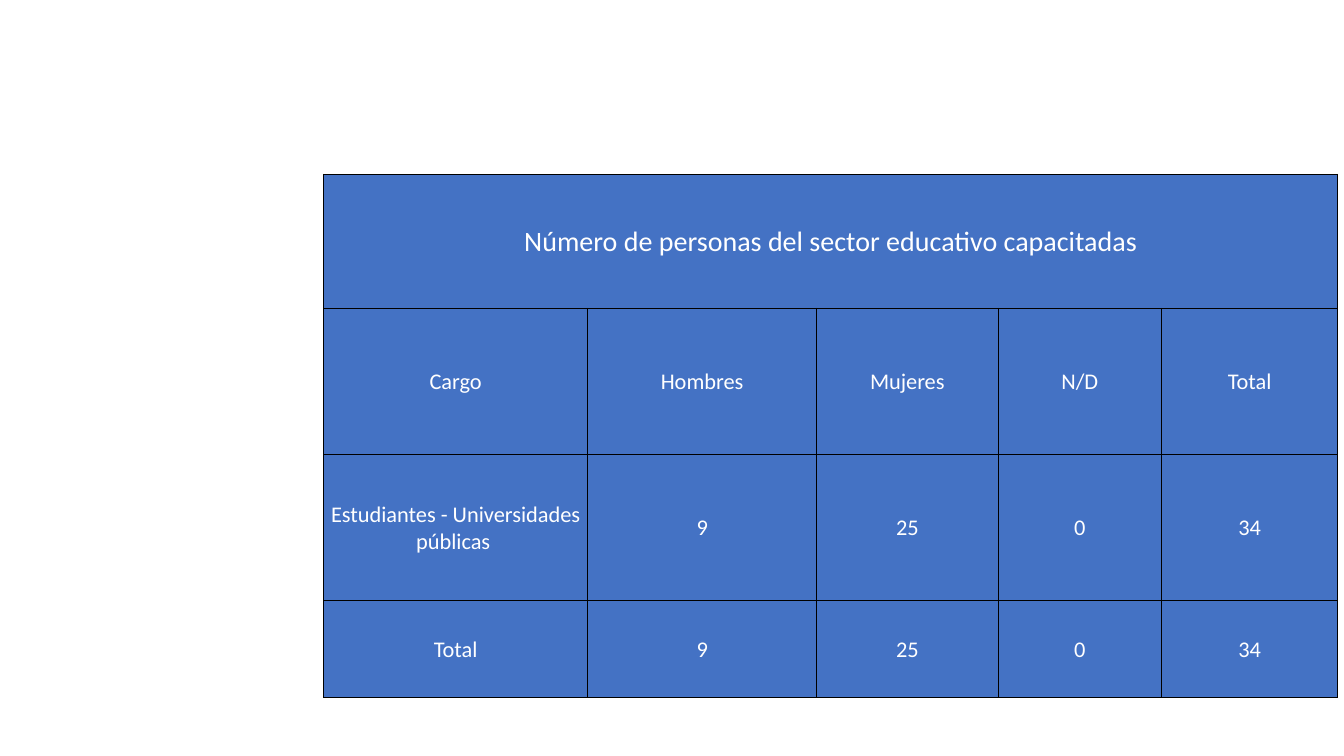
"""Build a slide with a table of trained people in the education sector."""
from lxml.etree import SubElement
from pptx import Presentation
from pptx.dml.color import RGBColor
from pptx.enum.text import MSO_ANCHOR, PP_ALIGN
from pptx.oxml.ns import qn
from pptx.util import Inches, Pt


def color(value):
    return RGBColor.from_string(value)


def add_borders(cell, value, width):
    properties = cell._tc.get_or_add_tcPr()
    for side in ("lnL", "lnR", "lnT", "lnB"):
        line = SubElement(properties, qn(f"a:{side}"), w=str(width))
        fill = SubElement(line, qn("a:solidFill"))
        SubElement(fill, qn("a:srgbClr"), val=value)


deck = Presentation()
deck.slide_width, deck.slide_height = Inches(13.33), Inches(7.5)
page = deck.slides.add_slide(deck.slide_layouts[6])

column_widths = [2.62, 2.27, 1.8, 1.62, 1.75]
row_heights = [1.33, 1.45, 1.45, 0.96]
rows = [
    ["Número de personas del sector educativo capacitadas", "", "", "", ""],
    ["Cargo", "Hombres", "Mujeres", "N/D", "Total"],
    ["Estudiantes - Universidades públicas ", "9", "25", "0", "34"],
    ["Total", "9", "25", "0", "34"],
]

table = page.shapes.add_table(
    len(rows), len(column_widths), Inches(3.21), Inches(1.73),
    Inches(sum(column_widths)), Inches(sum(row_heights))).table
for column, width in zip(table.columns, column_widths):
    column.width = Inches(width)
for row, height in zip(table.rows, row_heights):
    row.height = Inches(height)
table.cell(0, 0).merge(table.cell(0, len(column_widths) - 1))

for row_index, texts in enumerate(rows):
    for column_index, text in enumerate(texts):
        cell = table.cell(row_index, column_index)
        add_borders(cell, "000000", Pt(1))
        cell.fill.solid()
        cell.fill.fore_color.rgb = color("4472C4")
        cell.vertical_anchor = MSO_ANCHOR.MIDDLE
        cell.margin_left = cell.margin_right = cell.margin_top = Inches(0.01)
        cell.margin_bottom = 0
        if cell.is_spanned:
            continue
        cell.text = text
        para = cell.text_frame.paragraphs[0]
        para.alignment = PP_ALIGN.CENTER
        para.font.name = "Calibri"
        para.font.size = Pt(20 if row_index == 0 else 16)
        para.font.bold = False
        para.font.color.rgb = color("FFFFFF")

deck.save("out.pptx")
